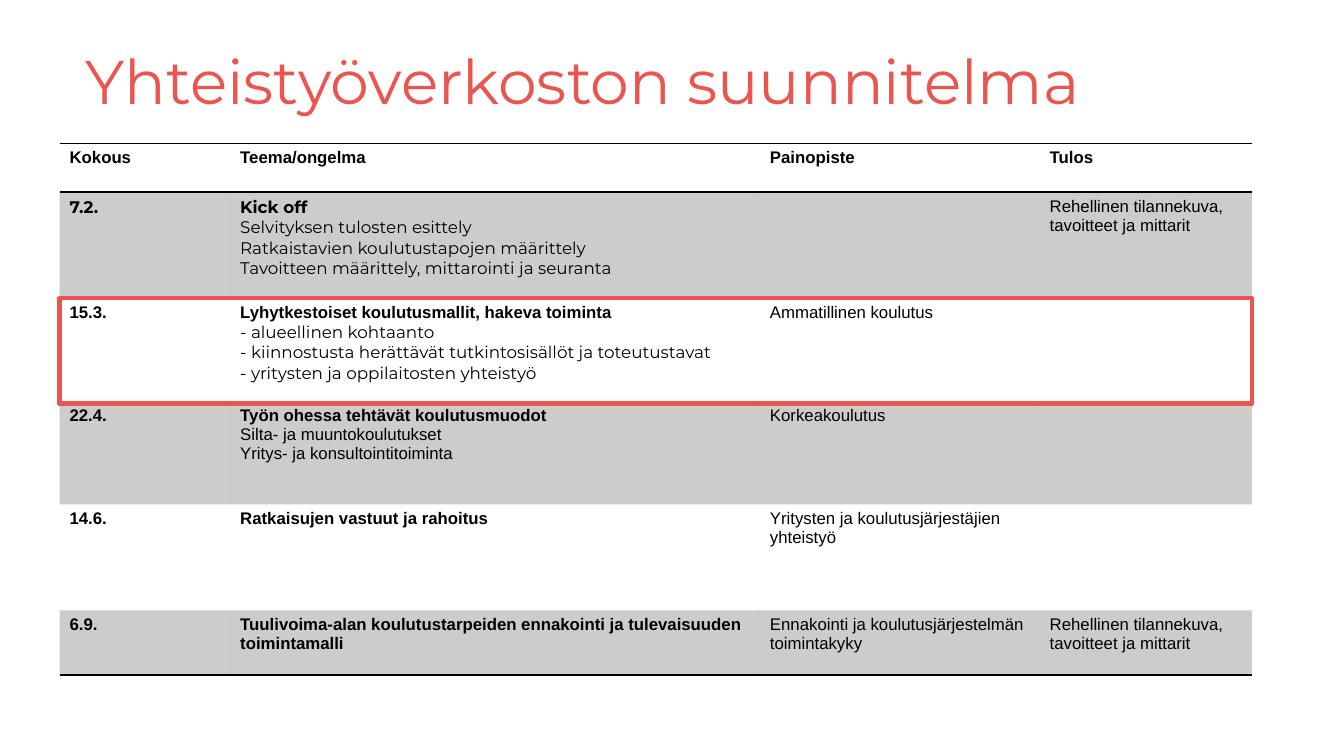
from lxml.etree import SubElement
from pptx import Presentation
from pptx.dml.color import RGBColor
from pptx.enum.shapes import MSO_SHAPE as Shape
from pptx.enum.text import MSO_ANCHOR as Anchor, PP_ALIGN as Align
from pptx.oxml.ns import qn
from pptx.util import Cm, Pt

CORAL = RGBColor(0xEA, 0x56, 0x4F)
BLACK = RGBColor(0, 0, 0)
BODY = "Arial"
HEAD = "Montserrat"
NO_GRID = "{2D5ABB26-0587-4C30-8999-92F81FD0307C}"

LEFT, WIDTH = 1.5, 30.05
COLS = [4.3, 13.35, 7.05, 5.35]
ROWS = [1.23, 2.67, 2.6, 2.6, 2.67, 1.63]


def bold(text, font=BODY):
    return text, font, True


def plain(text, font=BODY):
    return text, font, False


GOAL = [plain("Rehellinen tilannekuva, tavoitteet ja mittarit")]
PLAN = [
    [[bold(name)] for name in ("Kokous", "Teema/ongelma", "Painopiste", "Tulos")],
    [[bold("7.2.", HEAD)],
     [bold("Kick off", HEAD),
      plain("Selvityksen tulosten esittely", HEAD),
      plain("Ratkaistavien koulutustapojen määrittely", HEAD),
      plain("Tavoitteen määrittely, mittarointi ja seuranta", HEAD)],
     [], GOAL],
    [[bold("15.3.")],
     [bold("Lyhytkestoiset koulutusmallit, hakeva toiminta"),
      plain("- alueellinen kohtaanto", HEAD),
      plain("- kiinnostusta herättävät tutkintosisällöt ja toteutustavat", HEAD),
      plain("- yritysten ja oppilaitosten yhteistyö", HEAD)],
     [plain("Ammatillinen koulutus")], []],
    [[bold("22.4.")],
     [bold("Työn ohessa tehtävät koulutusmuodot"),
      plain("Silta- ja muuntokoulutukset"),
      plain("Yritys- ja konsultointitoiminta")],
     [plain("Korkeakoulutus")], []],
    [[bold("14.6.")],
     [bold("Ratkaisujen vastuut ja rahoitus")],
     [plain("Yritysten ja koulutusjärjestäjien yhteistyö")], []],
    [[bold("6.9.")],
     [bold("Tuulivoima-alan koulutustarpeiden ennakointi ja tulevaisuuden "
           "toimintamalli")],
     [plain("Ennakointi ja koulutusjärjestelmän toimintakyky")], GOAL],
]


class Deck:
    """Holds the presentation, its style and the current slide."""

    def __init__(self):
        self.prs = Presentation()
        self.prs.slide_width, self.prs.slide_height = Cm(33.87), Cm(19.05)
        self.slide = self.prs.slides.add_slide(self.prs.slide_layouts[5])

    def run(self, para, text, font, size, color, strong=False):
        run = para.add_run()
        run.text = text
        run.font.name, run.font.size, run.font.bold = font, Pt(size), strong
        run.font.color.rgb = color

    def title(self, text):
        box = self.slide.shapes.title
        box.left, box.top, box.width, box.height = Cm(1.9), Cm(0.28), Cm(29.2), Cm(3.68)
        frame = box.text_frame
        frame.word_wrap = True
        frame.vertical_anchor = Anchor.MIDDLE
        para = frame.paragraphs[0]
        para.alignment = Align.LEFT
        para.line_spacing = 0.9
        self.run(para, text, HEAD, 44, CORAL)

    def rule(self, cell, side):
        """Draw a thin black border on one side of a cell."""
        line = SubElement(cell._tc.get_or_add_tcPr(), qn("a:ln" + side), w=str(Pt(1)))
        fill = SubElement(line, qn("a:solidFill"))
        SubElement(fill, qn("a:srgbClr"), val=str(BLACK))

    def shade(self, cell):
        """Fill a cell with black at 20 % opacity."""
        cell.fill.solid()
        cell.fill.fore_color.rgb = BLACK
        color = cell._tc.tcPr.find(qn("a:solidFill")).find(qn("a:srgbClr"))
        SubElement(color, qn("a:alpha"), val="20000")

    def fill(self, cell, lines):
        """Put the lines into a cell, one paragraph each."""
        frame = cell.text_frame
        for n, (text, font, strong) in enumerate(lines):
            para = frame.add_paragraph() if n else frame.paragraphs[0]
            self.run(para, text, font, 12, BLACK, strong)

    def table(self, top, plan):
        shape = self.slide.shapes.add_table(
            len(ROWS), len(COLS), Cm(LEFT), Cm(top), Cm(WIDTH), Cm(sum(ROWS)))
        table = shape.table
        table.first_row = table.horz_banding = False
        table._tbl.tblPr.find(qn("a:tableStyleId")).text = NO_GRID
        for col, width in zip(table.columns, COLS):
            col.width = Cm(width)
        for r, (row, height) in enumerate(zip(table.rows, ROWS)):
            row.height = Cm(height)
            for cell, lines in zip(row.cells, plan[r]):
                self.fill(cell, lines)
                if r == 0:
                    self.rule(cell, "T")
                if r in (0, len(ROWS) - 1):
                    self.rule(cell, "B")
                if r % 2:
                    self.shade(cell)
                else:
                    cell.fill.background()

    def frame(self, top, height):
        box = self.slide.shapes.add_shape(
            Shape.RECTANGLE, Cm(LEFT), Cm(top), Cm(WIDTH), Cm(height))
        box.shadow.inherit = False
        box.fill.background()
        box.line.color.rgb = CORAL
        box.line.width = Pt(3)


def main():
    deck = Deck()
    deck.title("Yhteistyöverkoston suunnitelma")
    deck.table(3.61, PLAN)
    deck.frame(7.52, 2.65)
    deck.prs.save("out.pptx")


if __name__ == "__main__":
    main()
